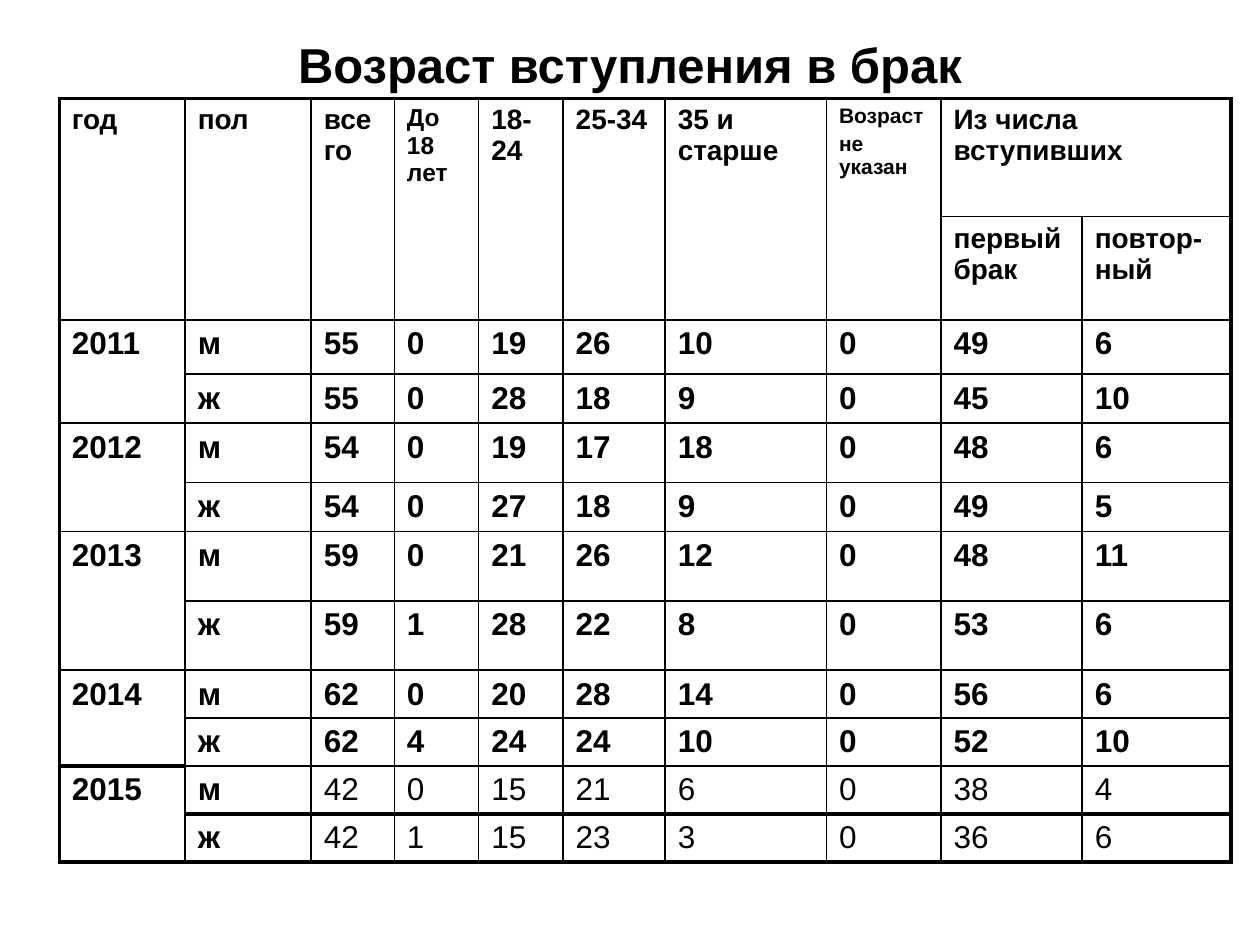
from lxml import etree
from pptx import Presentation
from pptx import util as u
from pptx.dml.color import RGBColor
from pptx.enum import text
from pptx.oxml import ns

COLORS = {"ink": "000000"}
THIN, THICK = 1, 2.25


def write_text(frame, words, size=18, bold=True, align=None, percent_before=0):
    for index, line in enumerate(words.split("\n")):
        paragraph = frame.paragraphs[0] if index == 0 else frame.add_paragraph()
        run = paragraph.add_run()
        run.text = line
        run.font.name = "Arial"
        run.font.size = u.Pt(size)
        run.font.bold = bold
        run.font.color.rgb = RGBColor.from_string(COLORS["ink"])
        if align is not None:
            paragraph.alignment = align
        if percent_before:
            spacing = etree.SubElement(paragraph._p.get_or_add_pPr(), ns.qn("a:spcBef"))
            etree.SubElement(spacing, ns.qn("a:spcPct"), val=str(percent_before * 1000))


def set_borders(cell, **widths):
    properties = cell._tc.get_or_add_tcPr()
    for index, (side, width) in enumerate(widths.items()):
        line = etree.Element(ns.qn(f"a:ln{side}"), w=str(u.Pt(width)))
        fill = etree.SubElement(line, ns.qn("a:solidFill"))
        etree.SubElement(fill, ns.qn("a:srgbClr"), val=COLORS["ink"])
        properties.insert(index, line)


presentation = Presentation()
presentation.slide_width = u.Inches(10)
presentation.slide_height = u.Inches(7.5)
slide = presentation.slides.add_slide(presentation.slide_layouts[5])

# Title
title = slide.shapes.title
title.left, title.top = int(presentation.slide_width * 0.05), 0
title.width = int(presentation.slide_width * 0.9)
title.height = u.Inches(1.02)
title.text_frame.vertical_anchor = text.MSO_ANCHOR.MIDDLE
write_text(title.text_frame, "Возраст вступления в брак", size=28,
           align=text.PP_ALIGN.CENTER)

# Table contents
headings = ["год", "пол", "всего", "До 18 лет", "18-24", "25-34", "35 и старше",
            "Возраст\nне указан", "Из числа вступивших", ""]
subheadings = [""] * 8 + ["первый брак", "повтор-ный"]
heading_sizes = {3: 14, 7: 12}
marriages = {
    "2011": ([55, 0, 19, 26, 10, 0, 49, 6], [55, 0, 28, 18, 9, 0, 45, 10]),
    "2012": ([54, 0, 19, 17, 18, 0, 48, 6], [54, 0, 27, 18, 9, 0, 49, 5]),
    "2013": ([59, 0, 21, 26, 12, 0, 48, 11], [59, 1, 28, 22, 8, 0, 53, 6]),
    "2014": ([62, 0, 20, 28, 14, 0, 56, 6], [62, 4, 24, 24, 10, 0, 52, 10]),
    "2015": ([42, 0, 15, 21, 6, 0, 38, 4], [42, 1, 15, 23, 3, 0, 36, 6]),
}
rows = [headings, subheadings]
for year, (men, women) in marriages.items():
    rows += [[year, "м", *men], ["", "ж", *women]]

# Table grid
column_widths = [1, 1, 0.66, 0.67, 0.67, 0.81, 1.28, 0.91, 1.12, 1.18]
row_heights = [0.94, 0.82, 0.43, 0.39, 0.47, 0.39, 0.55, 0.55] + [0.32] * 4
row_count, column_count = len(row_heights), len(column_widths)
last_year_row = row_count - 2
table = slide.shapes.add_table(
    row_count, column_count, u.Inches(0.47), u.Inches(0.78),
    u.Inches(sum(column_widths)), u.Inches(sum(row_heights))).table
table.first_row = table.horz_banding = False
for column, width in zip(table.columns, column_widths):
    column.width = u.Inches(width)
for row, height in zip(table.rows, row_heights):
    row.height = u.Inches(height)

# Merged headings and years
for column in range(column_count - 2):
    table.cell(0, column).merge(table.cell(1, column))
table.cell(0, column_count - 2).merge(table.cell(0, column_count - 1))
for row in range(2, row_count, 2):
    table.cell(row, 0).merge(table.cell(row + 1, 0))

# Cell text and borders
for row, values in enumerate(rows):
    for column, value in enumerate(values):
        cell = table.cell(row, column)
        cell.fill.background()
        last_year = row >= last_year_row
        tight = (last_year and column > 0) or (column == 3 and row < 8)
        if value != "":
            write_text(cell.text_frame, str(value),
                       size=heading_sizes.get(column, 16) if row < 2 else 18,
                       bold=not (last_year and column > 1),
                       percent_before=0 if tight else 20)
        inner_line = last_year_row if column == 0 else last_year_row + 1
        thick_lines = {0, inner_line, row_count}
        right_edge = column + cell.span_width
        bottom_edge = row + cell.span_height
        set_borders(cell,
                    L=THICK if column == 0 else THIN,
                    R=THICK if right_edge == column_count else THIN,
                    T=THICK if row in thick_lines else THIN,
                    B=THICK if bottom_edge in thick_lines else THIN)

presentation.save("out.pptx")
